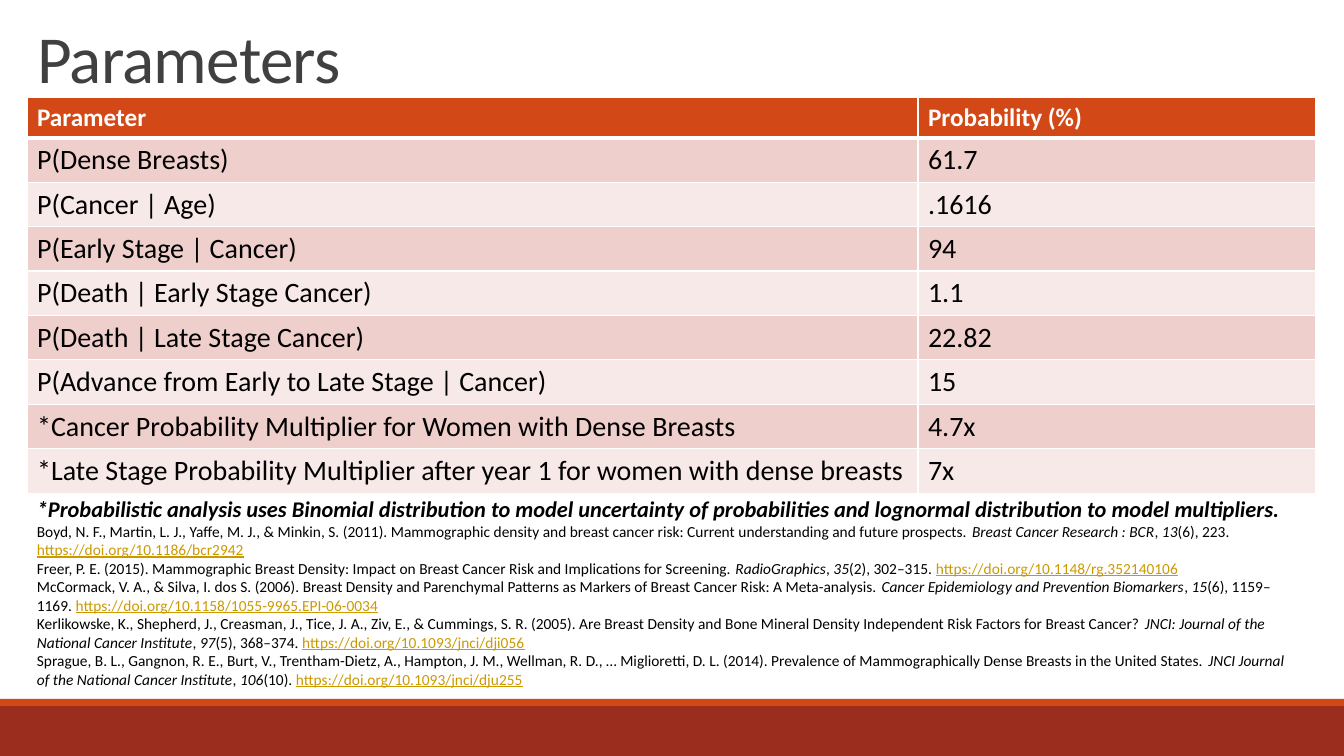
from lxml.etree import SubElement
from pptx import Presentation
from pptx.dml.color import RGBColor
from pptx.enum.shapes import MSO_SHAPE
from pptx.enum.text import MSO_ANCHOR, PP_ALIGN
from pptx.oxml.ns import qn
from pptx.util import Pt

PX = 914400 / 100.8
FONT = "Calibri"
ORANGE, RUST, LINK = "D34817", "9B2D1F", "CC9900"
WHITE, BLACK, GREY = "FFFFFF", "000000", "404040"
BANDS = ("EFCFCC", "F7E9E8")

ROWS = [
    ("Parameter", "Probability (%)"),
    ("P(Dense Breasts)", "61.7"),
    ("P(Cancer | Age)", ".1616"),
    ("P(Early Stage | Cancer)", "94"),
    ("P(Death | Early Stage Cancer)", "1.1"),
    ("P(Death | Late Stage Cancer)", "22.82"),
    ("P(Advance from Early to Late Stage | Cancer)", "15"),
    ("*Cancer Probability Multiplier for Women with Dense Breasts", "4.7x"),
    ("*Late Stage Probability Multiplier after year 1 for women with dense breasts", "7x"),
]
NOTE = ("*Probabilistic analysis uses Binomial distribution to model uncertainty of "
        "probabilities and lognormal distribution to model multipliers.")
REFERENCES = [
    ("Boyd, N. F., Martin, L. J., Yaffe, M. J., & Minkin, S. (2011). Mammographic density and "
     "breast cancer risk: Current understanding and future prospects. ",
     "Breast Cancer Research : BCR", "13", "(6), 223. ", "https://doi.org/10.1186/bcr2942"),
    ("Freer, P. E. (2015). Mammographic Breast Density: Impact on Breast Cancer Risk and "
     "Implications for Screening. ",
     "RadioGraphics", "35", "(2), 302–315. ", "https://doi.org/10.1148/rg.352140106"),
    ("McCormack, V. A., & Silva, I. dos S. (2006). Breast Density and Parenchymal Patterns as "
     "Markers of Breast Cancer Risk: A Meta-analysis. ",
     "Cancer Epidemiology and Prevention Biomarkers", "15", "(6), 1159–1169. ",
     "https://doi.org/10.1158/1055-9965.EPI-06-0034"),
    ("Kerlikowske, K., Shepherd, J., Creasman, J., Tice, J. A., Ziv, E., & Cummings, S. R. (2005). "
     "Are Breast Density and Bone Mineral Density Independent Risk Factors for Breast Cancer? ",
     "JNCI: Journal of the National Cancer Institute", "97", "(5), 368–374. ",
     "https://doi.org/10.1093/jnci/dji056"),
    ("Sprague, B. L., Gangnon, R. E., Burt, V., Trentham-Dietz, A., Hampton, J. M., Wellman, R. D., "
     "… Miglioretti, D. L. (2014). Prevalence of Mammographically Dense Breasts in the "
     "United States. ",
     "JNCI Journal of the National Cancer Institute", "106", "(10). ",
     "https://doi.org/10.1093/jnci/dju255"),
]


def px(n):
    """Turn pixels into EMU."""
    return round(n * PX)


def paint(target, color):
    """Give a fill or a font a solid hex colour."""
    if hasattr(target, "solid"):
        target.solid()
        target = target.fore_color
    else:
        target = target.color
    target.rgb = RGBColor.from_string(color)


def add_run(p, text, size, color=BLACK, bold=False, italic=False, underline=False):
    """Append one formatted run to a paragraph."""
    r = p.add_run()
    r.text = text
    f = r.font
    f.name, f.size = FONT, Pt(size)
    f.bold, f.italic, f.underline = bold, italic, underline
    paint(f, color)
    return r


def add_footer_bars(slide, x, y, w, h):
    """Draw the rust footer with an orange strip along its top."""
    strip = 7
    for top, height, color in ((y + strip, h - strip, RUST), (y, strip, ORANGE)):
        sp = slide.shapes.add_shape(MSO_SHAPE.RECTANGLE, px(x), px(top), px(w), px(height))
        sp.shadow.inherit = False
        paint(sp.fill, color)
        sp.line.fill.background()


def set_title(slide, text, x, y, w, h):
    """Place and format the title placeholder."""
    sp = slide.shapes.title
    sp.left, sp.top, sp.width, sp.height = px(x), px(y), px(w), px(h)
    tf = sp.text_frame
    tf.vertical_anchor = MSO_ANCHOR.BOTTOM
    p = tf.paragraphs[0]
    p.alignment, p.line_spacing = PP_ALIGN.LEFT, 0.85
    r = add_run(p, text, 48, GREY)
    r.font._element.set("spc", "-50")


def set_borders(cell, widths):
    """Give a cell white borders, with widths in points by side."""
    tcPr = cell._tc.get_or_add_tcPr()
    for side, width in widths.items():
        ln = SubElement(tcPr, qn("a:ln" + side), w=str(Pt(width)))
        SubElement(SubElement(ln, qn("a:solidFill")), qn("a:srgbClr"), val=WHITE)


def add_parameter_table(slide, x, y, w, h):
    """Add the banded table of parameters and probabilities."""
    header_h, first_w = 40, 891
    table = slide.shapes.add_table(len(ROWS), 2, px(x), px(y), px(w), px(h)).table
    table.columns[0].width, table.columns[1].width = px(first_w), px(w - first_w)
    for i, values in enumerate(ROWS):
        header = i == 0
        table.rows[i].height = px(header_h if header else (h - header_h) / (len(ROWS) - 1))
        for j, value in enumerate(values):
            cell = table.cell(i, j)
            set_borders(cell, {"L": 1, "R": 1, "T": 3 if i == 1 else 1, "B": 3 if header else 1})
            paint(cell.fill, ORANGE if header else BANDS[(i - 1) % 2])
            add_run(cell.text_frame.paragraphs[0], value, 18 if header else 20,
                    WHITE if header else BLACK, bold=header)


def add_references(slide, x, y, w, h):
    """Write the footnote and the list of references."""
    tf = slide.shapes.add_textbox(px(x), px(y), px(w), px(h)).text_frame
    tf.word_wrap = True
    add_run(tf.paragraphs[0], NOTE, 16, bold=True, italic=True)
    for citation, journal, volume, pages, address in REFERENCES:
        p = tf.add_paragraph()
        add_run(p, citation, 11)
        add_run(p, journal, 11, italic=True)
        add_run(p, ", ", 11)
        add_run(p, volume, 11, italic=True)
        add_run(p, pages, 11)
        add_run(p, address, 11, LINK, underline=True)


def main():
    """Build and save the slide."""
    prs = Presentation()
    prs.slide_width, prs.slide_height = px(1344), px(756)
    slide = prs.slides.add_slide(prs.slide_layouts[5])
    add_footer_bars(slide, 0, 699, 1344, 57)
    set_title(slide, "Parameters", 27, 20, 1159, 82)
    add_parameter_table(slide, 27, 97, 1289, 395)
    add_references(slide, 27, 490, 1272, 224)
    prs.save("out.pptx")


if __name__ == "__main__":
    main()
